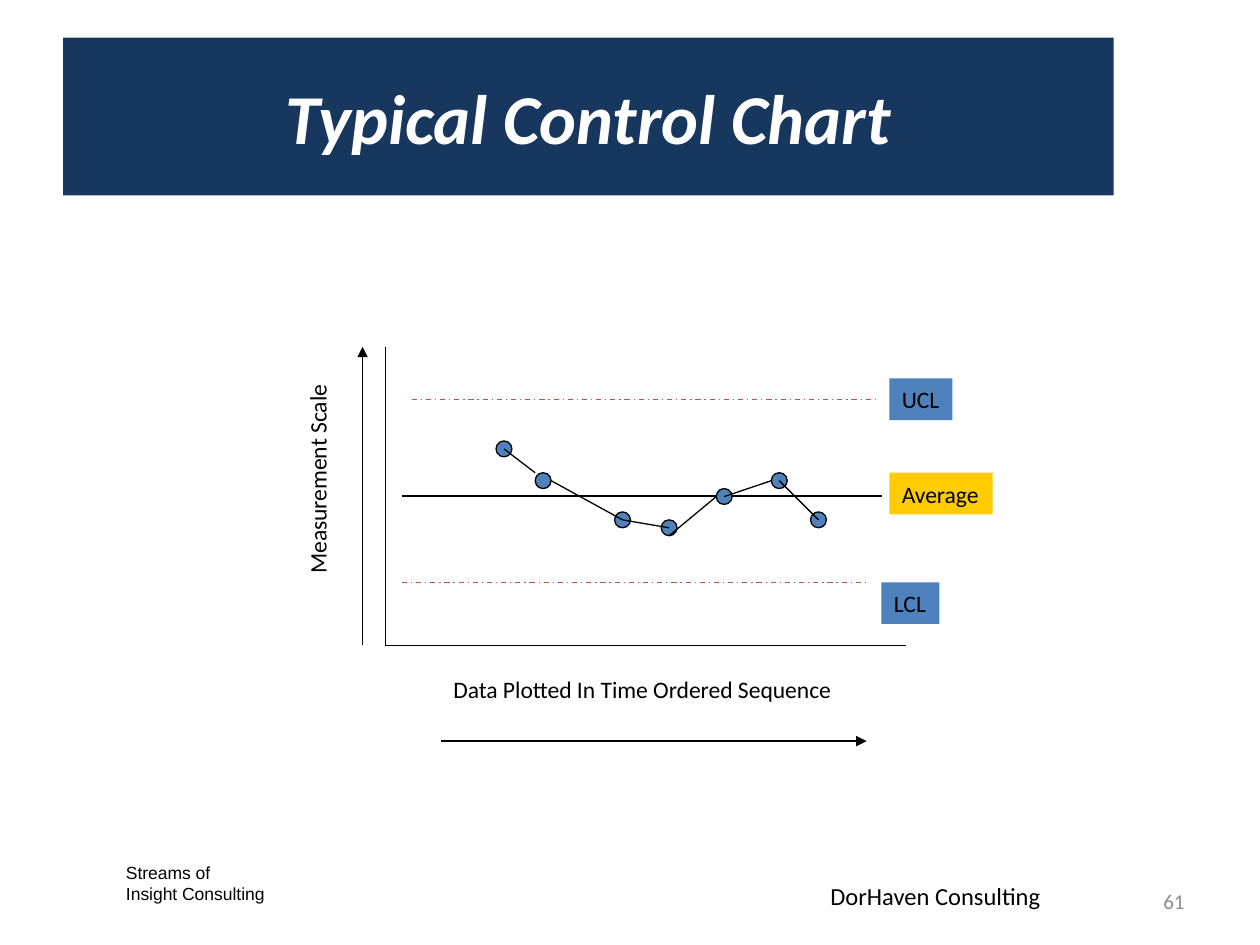
from itertools import pairwise

from lxml.etree import SubElement
from pptx import Presentation
from pptx.dml.color import RGBColor
from pptx.enum.dml import MSO_LINE
from pptx.enum.shapes import MSO_CONNECTOR, MSO_SHAPE
from pptx.enum.text import MSO_ANCHOR, PP_ALIGN
from pptx.oxml.ns import qn
from pptx.util import Cm, Pt

NAVY = RGBColor(0x17, 0x37, 0x5E)
BLUE = RGBColor(0x4F, 0x81, 0xBD)
GOLD = RGBColor(0xFF, 0xCC, 0x00)
RED = RGBColor(0xC0, 0x50, 0x4D)
GREY = RGBColor(0x8C, 0x8C, 0x8C)
BLACK = RGBColor(0, 0, 0)
WHITE = RGBColor(255, 255, 255)

LABEL_H = 0.84
DOT_R = 0.16
POINTS = [(2.39, 2.06), (3.18, 2.7), (4.78, 3.49), (5.72, 3.65),
          (6.83, 3.02), (7.94, 2.7), (8.73, 3.49)]
START_SHIFTS = {1: (DOT_R, 0), 3: (0, DOT_R)}
END_SHIFTS = {0: (-DOT_R, -DOT_R), 3: (-DOT_R, 0), 4: (-DOT_R, 0)}


def write(tf, lines, size, color=BLACK, align=PP_ALIGN.LEFT, name="Calibri", **extra):
    """Fill a text frame with one formatted paragraph per line."""
    font = {"size": Pt(size), "name": name, **extra}
    for i, line in enumerate(lines):
        p = tf.add_paragraph() if i else tf.paragraphs[0]
        p.alignment = align
        r = p.add_run()
        r.text = line
        for key, value in font.items():
            setattr(r.font, key, value)
        r.font.color.rgb = color


def add_text(slide, box, lines, size, wrap=True, anchor=MSO_ANCHOR.TOP, **style):
    """Add a text box given in centimetres."""
    sp = slide.shapes.add_textbox(*map(Cm, box))
    sp.text_frame.word_wrap = wrap
    sp.text_frame.vertical_anchor = anchor
    write(sp.text_frame, lines, size, **style)
    return sp


def add_shape(slide, kind, box, fill):
    """Add a flat filled shape without outline."""
    sp = slide.shapes.add_shape(kind, *map(Cm, box))
    sp.shadow.inherit = False
    sp.fill.solid()
    sp.fill.fore_color.rgb = fill
    sp.line.fill.background()
    return sp


def add_line(slide, start, end, color=BLACK, dash=None, arrow=False):
    """Add a thin straight line, dashed or with an arrowhead on request."""
    cxn = slide.shapes.add_connector(MSO_CONNECTOR.STRAIGHT, *map(Cm, (*start, *end)))
    cxn.line.width = Pt(0.75)
    cxn.line.color.rgb = color
    if dash:
        cxn.line.dash_style = dash
    if arrow:
        SubElement(cxn.line._get_or_add_ln(), qn("a:tailEnd"), type="triangle")
    SubElement(cxn._element.spPr, qn("a:effectLst"))


def add_title(slide, left, top, width, height):
    """Format the title placeholder as a dark banner."""
    sp = slide.shapes.title
    sp.left, sp.top, sp.width, sp.height = map(Cm, (left, top, width, height))
    sp.fill.solid()
    sp.fill.fore_color.rgb = NAVY
    sp.text_frame.vertical_anchor = MSO_ANCHOR.MIDDLE
    write(sp.text_frame, ["Typical Control Chart"], 40, WHITE, PP_ALIGN.CENTER,
          bold=True, italic=True)


def add_axes(slide, left, top, width, height):
    """Draw the axes with their captions and direction arrows."""
    bottom = top + height
    add_line(slide, (left, top), (left, bottom))
    add_line(slide, (left, bottom), (left + width, bottom))
    add_line(slide, (left - 0.46, bottom), (left - 0.46, top), arrow=True)
    add_line(slide, (left + 1.12, bottom + 1.93), (left + 9.7, bottom + 1.93), arrow=True)
    sp = add_text(slide, (left - 3.56, top + 2.21, 4.39, LABEL_H),
                  ["Measurement Scale"], 13.5, wrap=False)
    sp.rotation = 270
    add_text(slide, (left + 1.12, bottom + 0.48, 8.26, LABEL_H),
             ["Data Plotted In Time Ordered Sequence"], 13.5, wrap=False)


def add_limits(slide, left, top, height):
    """Draw the average and control limit lines with their labels."""
    dash = MSO_LINE.DASH_DOT
    limits = [
        ("Average", height / 2, 0.33, 10, BLACK, None, (10.16, 2.54, 2.08), GOLD),
        ("UCL", 1.07, 0.53, 9.91, RED, dash, (10.16, 0.64, 1.27), BLUE),
        ("LCL", 4.75, 0.33, 9.7, RED, dash, (10, 4.75, 1.17), BLUE),
    ]
    for text, y, x1, x2, color, style, (x, label_y, w), fill in limits:
        add_line(slide, (left + x1, top + y), (left + x2, top + y), color, style)
        sp = add_shape(slide, MSO_SHAPE.RECTANGLE,
                       (left + x, top + label_y, w, LABEL_H), fill)
        sp.text_frame.word_wrap = False
        write(sp.text_frame, [text], 13.5)


def add_series(slide, left, top):
    """Draw the data points and the segments between them."""
    dots = [(left + x, top + y) for x, y in POINTS]
    for x, y in dots:
        sp = add_shape(slide, MSO_SHAPE.OVAL,
                       (x - DOT_R, y - DOT_R, 2 * DOT_R, 2 * DOT_R), BLUE)
        sp.line.color.rgb = BLACK
        sp.line.width = Pt(0.75)
    for i, ((x1, y1), (x2, y2)) in enumerate(pairwise(dots)):
        dx1, dy1 = START_SHIFTS.get(i, (0, 0))
        dx2, dy2 = END_SHIFTS.get(i, (0, 0))
        add_line(slide, (x1 + dx1, y1 + dy1), (x2 + dx2, y2 + dy2))


def add_control_chart(slide, left, top, width, height):
    """Assemble the control chart in the given plot area."""
    add_axes(slide, left, top, width, height)
    add_limits(slide, left, top, height)
    add_series(slide, left, top)


def add_footer(slide, left, top):
    """Place the two firm names and the page number."""
    add_text(slide, (left, top, 5.97, 1.12), ["Streams of", "Insight Consulting"],
             10, name="Arial")
    add_text(slide, (left + 14.2, top + 0.38, 7.42, 0.58), ["DorHaven Consulting"], 14)
    add_text(slide, (left + 15.92, top + 0.41, 5.92, 1.02), ["61"], 12,
             anchor=MSO_ANCHOR.MIDDLE, color=GREY, align=PP_ALIGN.RIGHT)


def main():
    """Build and save the slide."""
    prs = Presentation()
    prs.slide_width, prs.slide_height = Cm(25.4), Cm(19.05)
    slide = prs.slides.add_slide(prs.slide_layouts[5])
    add_footer(slide, 2.29, 17.25)
    add_title(slide, 1.27, 0.76, 21.18, 3.18)
    add_control_chart(slide, 7.77, 6.99, 10.49, 6.02)
    prs.save("out.pptx")


if __name__ == "__main__":
    main()
